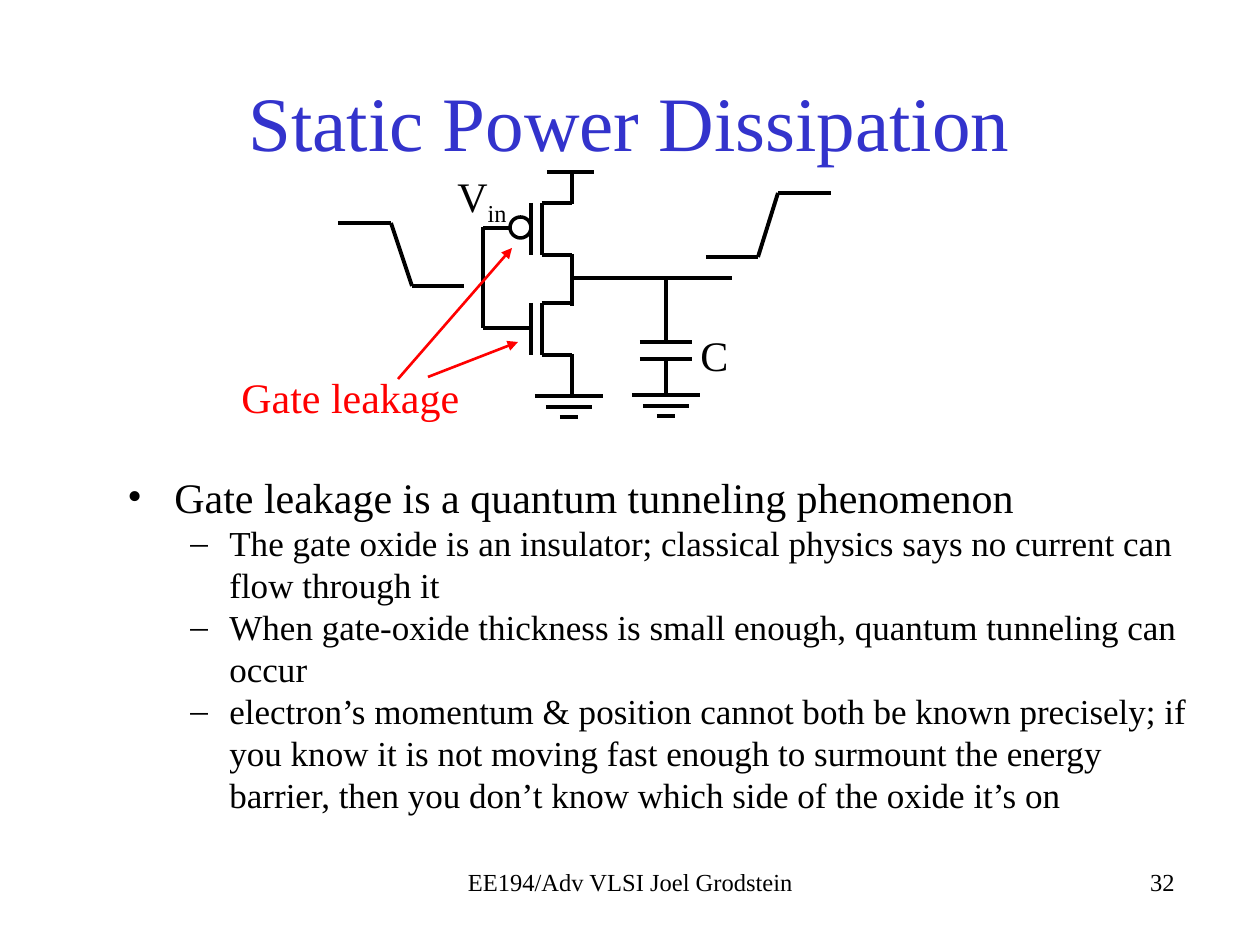
from dataclasses import dataclass

from lxml import etree
from pptx import Presentation
from pptx.dml.color import RGBColor
from pptx.enum.shapes import MSO_CONNECTOR, MSO_SHAPE
from pptx.enum.text import MSO_ANCHOR, MSO_AUTO_SIZE, PP_ALIGN
from pptx.oxml.ns import qn
from pptx.util import Emu, Pt

STRAIGHT = MSO_CONNECTOR.STRAIGHT
OVAL = MSO_SHAPE.OVAL
MIDDLE = MSO_ANCHOR.MIDDLE
GROW = MSO_AUTO_SIZE.SHAPE_TO_FIT_TEXT
LEFT, CENTER, RIGHT = PP_ALIGN.LEFT, PP_ALIGN.CENTER, PP_ALIGN.RIGHT

PX_PER_INCH = 126
FONT = "Times New Roman"
COLORS = {"ink": "000000", "title": "3333CC", "leak": "FF0000", "paper": "FFFFFF"}
WIRE, THIN, ARROW = 2.5, 2.25, 1.5  # line widths in points


@dataclass
class Wire:
    x1: int
    y1: int
    x2: int
    y2: int
    width: float = WIRE
    color: str = "ink"
    arrow: bool = False


@dataclass
class Label:
    text: str
    x: int
    y: int
    w: int
    h: int = 63
    size: int = 24
    color: str = "ink"
    align: PP_ALIGN = LEFT
    subscript: str = ""
    grow: bool = True


@dataclass
class Level:
    size: int
    bullet: str
    margin: int
    hanging: int


def px(n: int) -> Emu:
    return Emu(round(n * 914400 / PX_PER_INCH))


def rgb(name: str) -> RGBColor:
    return RGBColor.from_string(COLORS[name])


def add_run(p, text: str, size: int, color: str):
    r = p.add_run()
    r.text = text
    r.font.name = FONT
    r.font.size = Pt(size)
    r.font.color.rgb = rgb(color)
    return r


def add_box(shapes, x: int, y: int, w: int, h: int):
    tf = shapes.add_textbox(px(x), px(y), px(w), px(h)).text_frame
    tf.word_wrap = True
    return tf


def draw_wire(shapes, wire: Wire) -> None:
    c = shapes.add_connector(STRAIGHT, px(wire.x1), px(wire.y1), px(wire.x2), px(wire.y2))
    c.line.width = Pt(wire.width)
    c.line.color.rgb = rgb(wire.color)
    sp_pr = c._element.spPr
    if wire.arrow:
        etree.SubElement(sp_pr.find(qn("a:ln")), qn("a:tailEnd"), type="triangle")
    etree.SubElement(sp_pr, qn("a:effectLst"))


def draw_path(shapes, points: list[tuple[int, int]], width: float) -> None:
    for start, end in zip(points, points[1:]):
        draw_wire(shapes, Wire(*start, *end, width))


def draw_transistor(shapes, top: int) -> None:
    gate, channel, arm, bottom = 531, 542, 572, top + 52
    for x in (gate, channel):
        draw_wire(shapes, Wire(x, top, x, bottom))
    for y in (top, bottom):
        draw_wire(shapes, Wire(channel, y, arm, y))


def draw_ground(shapes, center: int, top: int) -> None:
    group = shapes.add_group_shape()
    for half, drop in ((34, 0), (23, 11), (9, 21)):
        draw_wire(group.shapes, Wire(center - half, top + drop, center + half, top + drop))


def draw_label(shapes, label: Label) -> None:
    tf = add_box(shapes, label.x, label.y, label.w, label.h)
    if label.grow:
        tf.auto_size = GROW
    p = tf.paragraphs[0]
    p.alignment = label.align
    add_run(p, label.text, label.size, label.color)
    if label.subscript:
        r = add_run(p, label.subscript, label.size, label.color)
        r.font._element.set("baseline", "-25000")


def add_bullet(p, text: str, level: Level) -> None:
    p_pr = p._p.get_or_add_pPr()
    p_pr.set("marL", str(px(level.margin)))
    p_pr.set("indent", str(-px(level.hanging)))
    etree.SubElement(p_pr, qn("a:buFont"), typeface=FONT)
    etree.SubElement(p_pr, qn("a:buChar"), char=level.bullet)
    add_run(p, text, level.size, "ink")


WIRES = [
    Wire(515, 228, 483, 228),  # gate inputs
    Wire(531, 328, 483, 328),
    Wire(483, 328, 483, 227),
    Wire(547, 172, 594, 172),  # supply rail
    Wire(572, 172, 572, 204),
    Wire(572, 254, 572, 306),  # drains and source
    Wire(572, 354, 572, 396),
    Wire(640, 342, 692, 342),  # capacitor
    Wire(640, 359, 692, 359),
    Wire(666, 341, 666, 278),
    Wire(666, 396, 666, 358),
    Wire(571, 278, 732, 278, THIN),  # output
]
WAVES = [
    [(338, 223), (391, 223), (412, 286), (464, 286)],
    [(706, 257), (758, 257), (778, 193), (831, 193)],
]
LEAKS = [
    Wire(428, 377, 518, 342, ARROW, "leak", True),
    Wire(398, 379, 512, 248, ARROW, "leak", True),
]
LABELS = [
    Label("C", 688, 323, 64),
    Label("Gate leakage", 229, 365, 247, color="leak"),
    Label("V", 445, 164, 86, subscript="in"),
    Label("EE194/Adv VLSI Joel Grodstein", 431, 861, 399, size=14, align=CENTER, grow=False),
    Label("32", 788, 861, 399, size=14, align=RIGHT, grow=False),
]
MAIN = Level(24, "•", 47, 47)
SUB = Level(20, "–", 102, 39)
BULLETS = [
    (MAIN, "Gate leakage is a quantum tunneling phenomenon"),
    (SUB, "The gate oxide is an insulator; classical physics says no current can flow through it"),
    (SUB, "When gate-oxide thickness is small enough, quantum tunneling can occur"),
    (SUB, "electron’s momentum & position cannot both be known precisely; if you know it is "
          "not moving fast enough to surmount the energy barrier, then you don’t know which "
          "side of the oxide it’s on"),
]


def main() -> None:
    prs = Presentation()
    prs.slide_width, prs.slide_height = px(1260), px(945)
    s = prs.slides.add_slide(prs.slide_layouts[5])
    shapes = s.shapes

    # Title
    title = shapes.title
    title.left, title.top, title.width, title.height = px(94), px(42), px(1071), px(158)
    tf = title.text_frame
    tf.vertical_anchor = MIDDLE
    tf.paragraphs[0].alignment = CENTER
    add_run(tf.paragraphs[0], "Static Power Dissipation", 44, "title")

    # Bullets
    tf = add_box(shapes, 115, 465, 1102, 297)
    for i, (level, text) in enumerate(BULLETS):
        p = tf.add_paragraph() if i else tf.paragraphs[0]
        if level is MAIN:
            p.space_before = Pt(2.5)
        else:
            p.level = 1
            p.line_spacing = Pt(24)
        add_bullet(p, text, level)

    # Inverter circuit and load
    for top in (203, 303):
        draw_transistor(shapes, top)
    for wire in WIRES:
        draw_wire(shapes, wire)
    for center, top in ((569, 396), (666, 395)):
        draw_ground(shapes, center, top)
    bubble = shapes.add_shape(OVAL, px(510), px(217), px(21), px(21))
    bubble.shadow.inherit = False
    bubble.fill.solid()
    bubble.fill.fore_color.rgb = rgb("paper")
    bubble.line.color.rgb = rgb("ink")
    bubble.line.width = Pt(2)

    # Input and output waveforms
    for points in WAVES:
        draw_path(shapes, points, THIN)

    # Leakage arrows, labels and footer
    for leak in LEAKS:
        draw_wire(shapes, leak)
    for label in LABELS:
        draw_label(shapes, label)

    prs.save("out.pptx")


if __name__ == "__main__":
    main()
